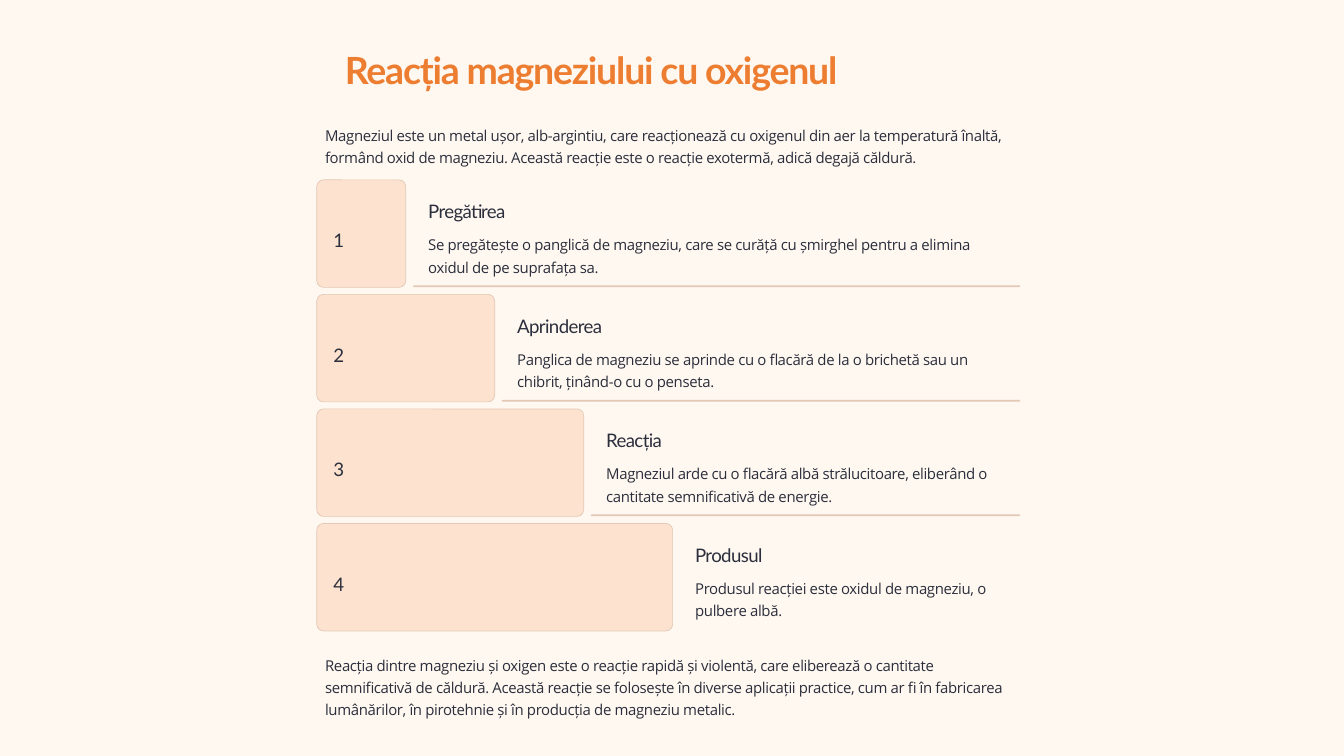
"""Build a slide with four growing steps of the magnesium and oxygen reaction."""
from collections import namedtuple

from pptx import Presentation
from pptx.dml.color import RGBColor
from pptx.enum.shapes import MSO_SHAPE
from pptx.enum.text import PP_ALIGN
from pptx.util import Cm, Pt

TITLE = "Reacția magneziului cu oxigenul"
INTRO = (
    "Magneziul este un metal ușor, alb-argintiu, care reacționează cu oxigenul din aer "
    "la temperatură înaltă, formând oxid de magneziu. Această reacție este o reacție "
    "exotermă, adică degajă căldură."
)
STEPS = [
    ("Pregătirea", "Se pregătește o panglică de magneziu, care se curăță cu șmirghel "
                   "pentru a elimina oxidul de pe suprafața sa."),
    ("Aprinderea", "Panglica de magneziu se aprinde cu o flacără de la o brichetă sau un "
                   "chibrit, ținând-o cu o penseta."),
    ("Reacția", "Magneziul arde cu o flacără albă strălucitoare, eliberând o cantitate "
                "semnificativă de energie."),
    ("Produsul", "Produsul reacției este oxidul de magneziu, o pulbere albă."),
]
OUTRO = (
    "Reacția dintre magneziu și oxigen este o reacție rapidă și violentă, care eliberează "
    "o cantitate semnificativă de căldură. Această reacție se folosește în diverse "
    "aplicații practice, cum ar fi în fabricarea lumânărilor, în pirotehnie și în "
    "producția de magneziu metalic."
)

Style = namedtuple("Style", "font size color leading spacing bold align wrap")
LEFT, MID, RIGHT = PP_ALIGN.LEFT, PP_ALIGN.CENTER, PP_ALIGN.RIGHT


class Theme:
    """Colours and type styles of the slide."""
    paper = RGBColor.from_string("FFF8F0")
    fill = RGBColor.from_string("FCE2CF")
    edge = RGBColor.from_string("E2C8B5")
    ink = RGBColor.from_string("2B2E3C")
    accent = RGBColor.from_string("ED7D31")
    title = Style("Lato", 32.1, accent, 40.1, -1, True, RIGHT, False)
    head = Style("Lato", 16, ink, 20, -0.5, False, LEFT, False)
    number = head._replace(leading=24.1, align=MID)
    body = Style("Open Sans", 12.8, ink, 19.2, -0.3, False, LEFT, True)


X, TOP = 9.58, 5.44
PITCH, GROW = 3.463, 2.69
HIGH, ROUND = 3.25, 0.2
RULE_END, BODY_END = 30.85, 30.61


def add_text(slide, text, style, x, y, w, h):
    frame = slide.shapes.add_textbox(Cm(x), Cm(y), Cm(w), Cm(h)).text_frame
    frame.word_wrap = style.wrap
    para = frame.paragraphs[0]
    para.alignment = style.align
    para.line_spacing = Pt(style.leading)
    run = para.add_run()
    run.text = text
    font = run.font
    font.name, font.size, font.bold = style.font, Pt(style.size), style.bold
    font.color.rgb = style.color
    run._r.get_or_add_rPr().set("spc", str(round(style.spacing * 100)))


def add_box(slide, x, y, w, h, fill, edge=None):
    box = slide.shapes.add_shape(MSO_SHAPE.ROUNDED_RECTANGLE, Cm(x), Cm(y), Cm(w), Cm(h))
    box.shadow.inherit = False
    box.adjustments[0] = min(0.5, ROUND / min(w, h))
    box.fill.solid()
    box.fill.fore_color.rgb = fill
    if edge:
        box.line.color.rgb = edge
        box.line.width = Pt(0.6)
    else:
        box.line.fill.background()


def add_step(slide, i, head, body):
    y, w = TOP + i * PITCH, (i + 1) * GROW
    left = X + w + 0.43
    add_box(slide, X, y, w, HIGH, Theme.fill, Theme.edge)
    add_text(slide, str(i + 1), Theme.number, 10.03, y + 1.19, 0.3, 0.84)
    add_text(slide, head, Theme.head, left, y + 0.45, 5.66, 0.71)
    add_text(slide, body, Theme.body, left, y + 1.43, BODY_END - left, 1.35)
    if i < len(STEPS) - 1:
        rule = X + w + 0.22
        add_box(slide, rule, y + 3.19, RULE_END - rule, 0.05, Theme.edge)


def main():
    deck = Presentation()
    deck.slide_width, deck.slide_height = Cm(40.64), Cm(22.86)
    slide = deck.slides.add_slide(deck.slide_layouts[6])
    slide.background.fill.solid()
    slide.background.fill.fore_color.rgb = Theme.paper
    add_text(slide, TITLE, Theme.title, X, 1.24, 16, 1.42)
    add_text(slide, INTRO, Theme.body, X, 3.56, 21.49, 1.35)
    for i, (head, body) in enumerate(STEPS):
        add_step(slide, i, head, body)
    add_text(slide, OUTRO, Theme.body, X, 19.58, 21.49, 2.03)
    deck.save("out.pptx")


if __name__ == "__main__":
    main()
